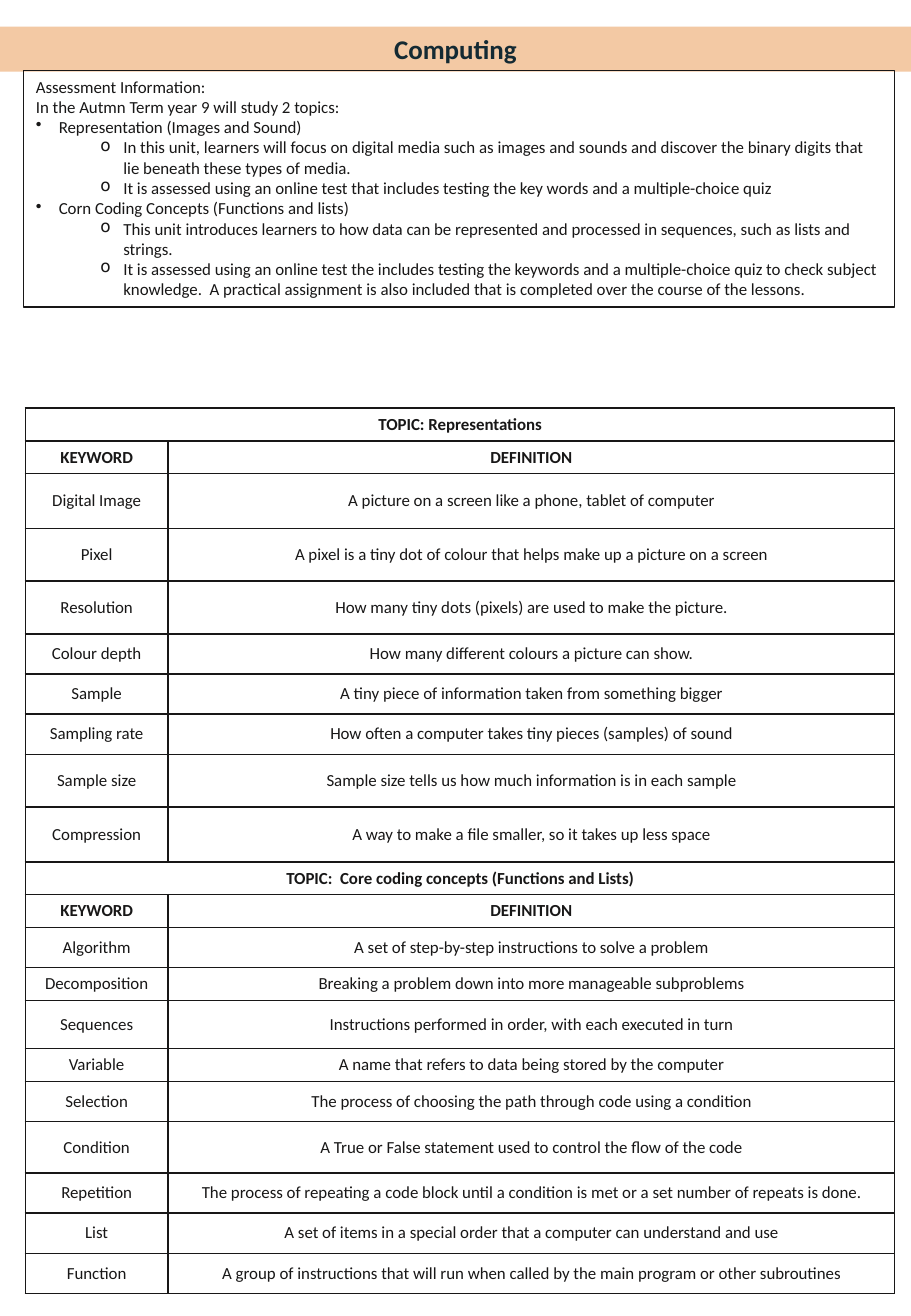
from dataclasses import dataclass
from typing import Any

from lxml.etree import SubElement
from pptx import Presentation
from pptx.dml.color import RGBColor
from pptx.enum.shapes import MSO_SHAPE as Shape
from pptx.enum.text import MSO_ANCHOR as Anchor, MSO_AUTO_SIZE as AutoSize, PP_ALIGN as Align
from pptx.oxml.ns import qn
from pptx.util import Cm, Pt

COLOURS = {"ink": "181717", "heading": "142A33", "band": "F3C9A4"}
BODY = {"size": Pt(10), "name": "Calibri", "bold": False}
BOLD = {**BODY, "bold": True}
HEADING = {**BOLD, "size": Pt(16)}
TEXT_FRAME = {"word_wrap": True, "auto_size": AutoSize.SHAPE_TO_FIT_TEXT,
              "vertical_anchor": Anchor.TOP}
CELL = {"vertical_anchor": Anchor.MIDDLE, "margin_left": Cm(0.1), "margin_right": Cm(0.1),
        "margin_top": Cm(0.13), "margin_bottom": Cm(0.13)}
COLUMN_WIDTHS = (2.98, 15.2)
HEADER_HEIGHT = 0.68
HANGING = 0.48


@dataclass
class Panel:
    left: float
    top: float
    width: float
    height: float
    fill: str | None = None
    line: str | None = None


@dataclass
class Note:
    text: str
    bullet: str = ""
    indent: float = 0
    level: int = 0


@dataclass
class Keyword:
    name: str
    definition: str
    height: float = 0.84


@dataclass
class Topic:
    title: str
    keywords: list[Keyword]


HEADING_BAND = Panel(0, 0.56, 19.05, 0.94, fill="band")
ASSESSMENT_BOX = Panel(0.5, 1.47, 18.21, 4.95, line="ink")


def topic_note(text: str) -> Note:
    return Note(text, "•", HANGING)


def detail_note(text: str, level: int) -> Note:
    return Note(text, "o", 1.83, level)


ASSESSMENT = [
    Note("Assessment Information:"),
    Note("In the Autmn Term year 9 will study 2 topics:"),
    topic_note("Representation (Images and Sound)"),
    detail_note("In this unit, learners will focus on digital media such as images and sounds "
                "and discover the binary digits that lie beneath these types of media.", 1),
    detail_note("It is assessed using an online test that includes testing the key words "
                "and a multiple-choice quiz", 1),
    topic_note("Corn Coding Concepts (Functions and lists)"),
    detail_note("This unit introduces learners to how data can be represented and processed "
                "in sequences, such as lists and strings.", 2),
    detail_note("It is assessed using an online test the includes testing the keywords and a "
                "multiple-choice quiz to check subject knowledge.  A practical assignment is "
                "also included that is completed over the course of the lessons.", 2),
]

TOPICS = [
    Topic("TOPIC: Representations", [
        Keyword("Digital Image", "A picture on a screen like a phone, tablet of computer", 1.15),
        Keyword("Pixel", "A pixel is a tiny dot of colour that helps make up a picture on a screen",
                1.1),
        Keyword("Resolution", "How many tiny dots (pixels) are used to make the picture.", 1.1),
        Keyword("Colour depth", "How many different colours a picture can show."),
        Keyword("Sample", "A tiny piece of information taken from something bigger"),
        Keyword("Sampling rate", "How often a computer takes tiny pieces (samples) of sound"),
        Keyword("Sample size", "Sample size tells us how much information is in each sample", 1.1),
        Keyword("Compression", "A way to make a file smaller, so it takes up less space", 1.15),
    ]),
    Topic("TOPIC:  Core coding concepts (Functions and Lists)", [
        Keyword("Algorithm", "A set of step-by-step instructions to solve a problem"),
        Keyword("Decomposition", "Breaking a problem down into more manageable subproblems", 0.68),
        Keyword("Sequences", "Instructions performed in order, with each executed in turn", 1.01),
        Keyword("Variable", "A name that refers to data being stored by the computer", 0.68),
        Keyword("Selection", "The process of choosing the path through code using a condition"),
        Keyword("Condition", "A True or False statement used to control the flow of the code", 1.07),
        Keyword("Repetition", "The process of repeating a code block until a condition is met "
                              "or a set number of repeats is done."),
        Keyword("List", "A set of items in a special order that a computer can understand and use"),
        Keyword("Function", "A group of instructions that will run when called by the main "
                            "program or other subroutines"),
    ]),
]


def rgb(colour: str) -> RGBColor:
    return RGBColor.from_string(COLOURS[colour])


def apply(target: Any, values: dict[str, Any]) -> None:
    for attribute, value in values.items():
        setattr(target, attribute, value)


def write(paragraph: Any, text: str, style: dict[str, Any], align: Align,
          colour: str = "ink") -> None:
    paragraph.alignment = align
    run = paragraph.add_run()
    run.text = text
    apply(run.font, style)
    run.font.color.rgb = rgb(colour)


def add_panel(slide: Any, panel: Panel) -> Any:
    shape = slide.shapes.add_shape(Shape.RECTANGLE, Cm(panel.left), Cm(panel.top),
                                   Cm(panel.width), Cm(panel.height))
    shape.shadow.inherit = False
    if panel.fill:
        shape.fill.solid()
        shape.fill.fore_color.rgb = rgb(panel.fill)
    else:
        shape.fill.background()
    if panel.line:
        shape.line.color.rgb = rgb(panel.line)
        shape.line.width = Pt(0.75)
    else:
        shape.line.fill.background()
    apply(shape.text_frame, TEXT_FRAME)
    return shape.text_frame


def add_notes(frame: Any, notes: list[Note]) -> None:
    for index, note in enumerate(notes):
        paragraph = frame.add_paragraph() if index else frame.paragraphs[0]
        paragraph.level = note.level
        if note.bullet:
            properties = paragraph._p.get_or_add_pPr()
            properties.set("marL", str(Cm(note.indent)))
            properties.set("indent", str(-Cm(HANGING)))
            SubElement(properties, qn("a:buChar"), char=note.bullet)
        write(paragraph, note.text, BODY, Align.LEFT)


def format_cell(cell: Any) -> None:
    apply(cell, CELL)
    properties = cell._tc.get_or_add_tcPr()
    for side in ("lnL", "lnR", "lnT", "lnB"):
        border = SubElement(properties, qn(f"a:{side}"), w=str(Pt(1)))
        fill = SubElement(border, qn("a:solidFill"))
        SubElement(fill, qn("a:srgbClr"), val=COLOURS["ink"])
    cell.fill.background()


def add_glossary(slide: Any, topics: list[Topic]) -> None:
    rows = []
    for topic in topics:
        rows.append(((topic.title,), HEADER_HEIGHT, BOLD))
        rows.append((("KEYWORD", "DEFINITION"), HEADER_HEIGHT, BOLD))
        rows += [((word.name, word.definition), word.height, BODY) for word in topic.keywords]
    glossary = slide.shapes.add_table(
        len(rows), len(COLUMN_WIDTHS), Cm(0.53), Cm(8.53),
        Cm(sum(COLUMN_WIDTHS)), Cm(sum(height for _, height, _ in rows))).table
    apply(glossary, {"first_row": False, "horz_banding": False})
    for column, width in zip(glossary.columns, COLUMN_WIDTHS):
        column.width = Cm(width)
    for index, (texts, height, style) in enumerate(rows):
        row = glossary.rows[index]
        row.height = Cm(height)
        for cell in row.cells:
            format_cell(cell)
        if len(texts) == 1:
            row.cells[0].merge(row.cells[1])
        for cell, text in zip(row.cells, texts):
            write(cell.text_frame.paragraphs[0], text, style, Align.CENTER)


def main() -> None:
    deck = Presentation()
    apply(deck, {"slide_width": Cm(19.05), "slide_height": Cm(27.51)})
    slide = deck.slides.add_slide(deck.slide_layouts[6])
    heading = add_panel(slide, HEADING_BAND)
    write(heading.paragraphs[0], "Computing", HEADING, Align.CENTER, "heading")
    add_notes(add_panel(slide, ASSESSMENT_BOX), ASSESSMENT)
    add_glossary(slide, TOPICS)
    deck.save("out.pptx")


if __name__ == "__main__":
    main()
